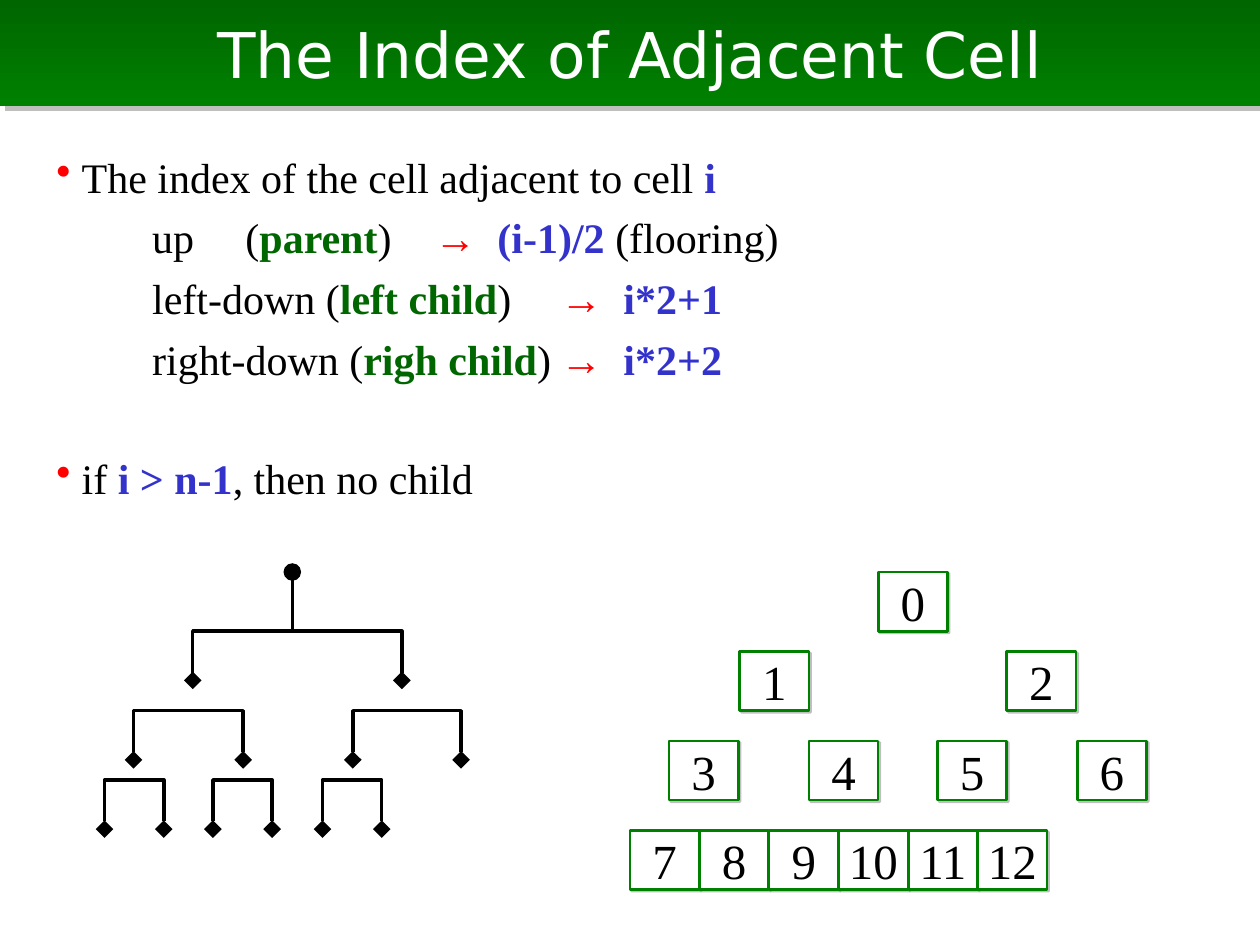
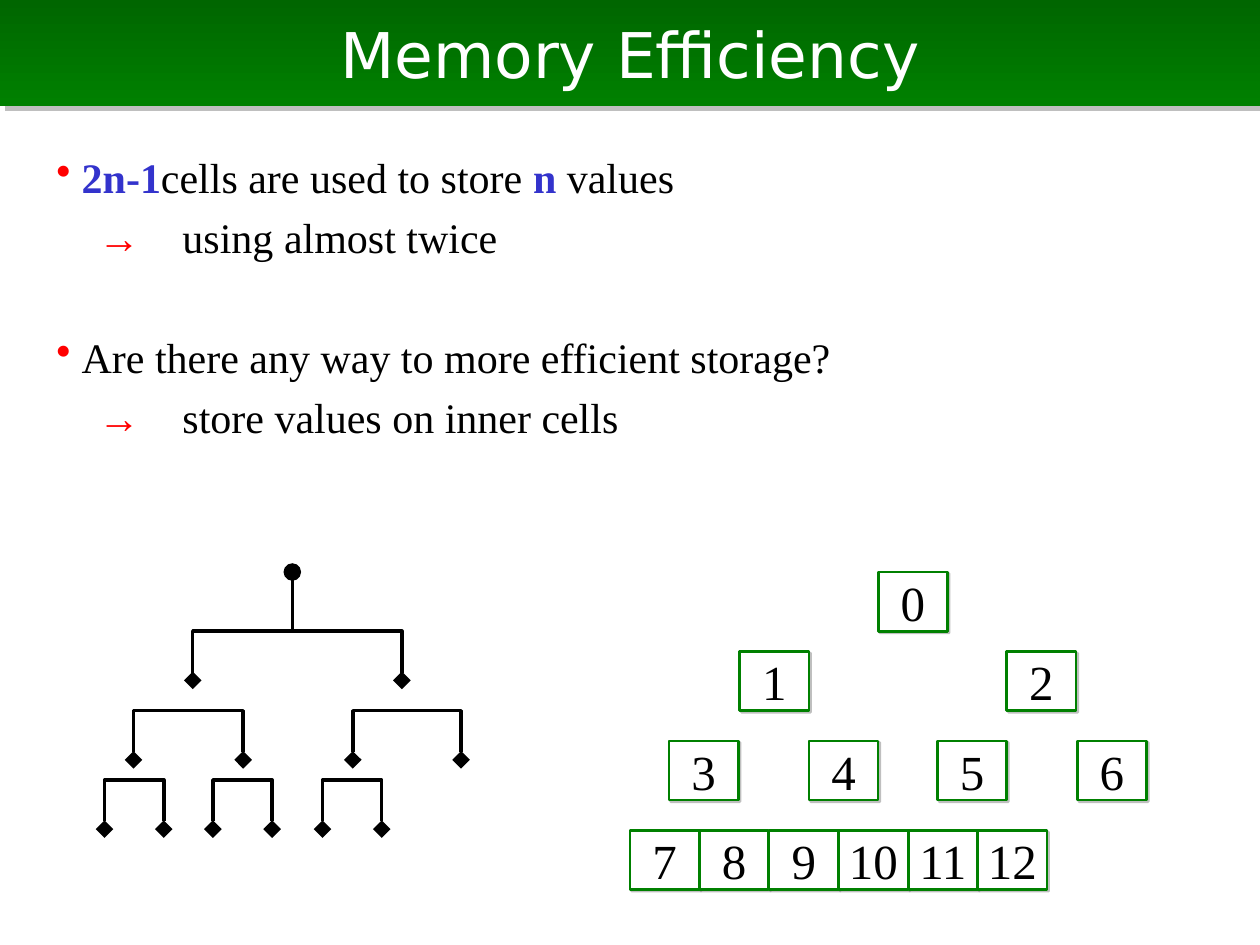
from lxml import etree
from pptx import Presentation
from pptx.dml.color import RGBColor
from pptx.enum.shapes import MSO_CONNECTOR, MSO_SHAPE
from pptx.enum.text import MSO_ANCHOR, PP_ALIGN
from pptx.oxml.ns import qn
from pptx.util import Inches, Pt

RECTANGLE = MSO_SHAPE.RECTANGLE
STRAIGHT = MSO_CONNECTOR.STRAIGHT
MIDDLE = MSO_ANCHOR.MIDDLE
CENTER = PP_ALIGN.CENTER

COLORS = {
    "ink": "000000",
    "paper": "FFFFFF",
    "dark_green": "006600",
    "green": "008000",
    "blue": "3333CC",
    "red": "FF0000",
    "shadow": "808080",
}
TITLE_FONT = "DejaVu Sans"
BODY_FONT = "Times New Roman"
LINE_GAP = 5.9
SECTION_GAP = 39.4

BRACKET_HEIGHT = 0.39
BRACKETS = [
    (5.01, [(1.53, 3.19)]),
    (5.64, [(1.06, 1.93), (2.8, 3.66)]),
    (6.19, [(0.83, 1.3), (1.69, 2.16), (2.56, 3.03)]),
]
ROOT_X, ROOT_TOP, ROOT_BOTTOM = 2.32, 4.54, 5.01

CELL_WIDTH, CELL_HEIGHT = 0.55, 0.47
LEAF_PITCH = 2.76 / 5
CELL_ROWS = [
    (4.54, [6.97]),
    (5.17, [5.87, 7.99]),
    (5.88, [5.31, 6.42, 7.44, 8.55]),
    (6.59, [5 + LEAF_PITCH * leaf for leaf in range(6)]),
]


def rgb(name):
    return RGBColor.from_string(COLORS[name])


def add_run(paragraph, text, size, color="ink", bold=False, font=BODY_FONT):
    run = paragraph.add_run()
    run.text = text
    run.font.name = font
    run.font.size = Pt(size)
    run.font.bold = bold
    run.font.color.rgb = rgb(color)


def add_shadow(shape, distance):
    shape.shadow.inherit = False
    effects = shape._element.spPr.find(qn("a:effectLst"))
    shadow = etree.SubElement(effects, qn("a:outerShdw"), blurRad="0",
                              dist=str(Pt(distance)), dir="2700000",
                              algn="ctr", rotWithShape="0")
    color = etree.SubElement(shadow, qn("a:srgbClr"), val=COLORS["shadow"])
    etree.SubElement(color, qn("a:alpha"), val="50000")


def add_title(slide, text):
    band = slide.shapes.title
    band.left, band.top = Inches(0), Inches(0)
    band.width, band.height = Inches(10), Inches(0.84)
    band.fill.gradient()
    band.fill.gradient_angle = 270
    for stop, name in zip(band.fill.gradient_stops, ("dark_green", "green")):
        stop.color.rgb = rgb(name)
    add_shadow(band, 4.2)
    band.text_frame.vertical_anchor = MIDDLE
    heading = band.text_frame.paragraphs[0]
    heading.alignment = CENTER
    add_run(heading, text, 36, "paper", font=TITLE_FONT)


def set_indent(paragraph, margin, first_line):
    properties = paragraph._p.get_or_add_pPr()
    properties.set("marL", str(Inches(margin)))
    properties.set("indent", str(Inches(first_line)))
    return properties


def format_bullet(paragraph):
    properties = set_indent(paragraph, 0.2, -0.2)
    color = etree.SubElement(properties, qn("a:buClr"))
    etree.SubElement(color, qn("a:srgbClr"), val=COLORS["red"])
    etree.SubElement(properties, qn("a:buChar"), char="•")


def format_detail(paragraph, start, stops):
    properties = set_indent(paragraph, 0, start)
    etree.SubElement(properties, qn("a:buNone"))
    tabs = etree.SubElement(properties, qn("a:tabLst"))
    for stop in stops:
        etree.SubElement(tabs, qn("a:tab"), pos=str(Inches(stop)), algn="l")


def bullet(*runs, gap=LINE_GAP):
    return runs, gap, None


def detail(start, stops, *runs):
    return runs, LINE_GAP, (start, stops)


def plain(text):
    return text, "ink", False


def strong(text, color="blue"):
    return text, color, True


def arrow():
    return strong("→\t", "red")


def child_rule(side, formula, stops):
    return detail(0.76, stops, plain(f"{side[0]} ("),
                  strong(side[1], "dark_green"), plain(")\t"),
                  arrow(), strong(formula))


def answer(text):
    return detail(0.33, [0.83], arrow(), plain(text))


def add_body(slide, lines):
    box = slide.shapes.add_textbox(Inches(0.35), Inches(1.15),
                                   Inches(9.06), Inches(3.23))
    frame = box.text_frame
    frame.word_wrap = True
    for index, (runs, gap, indent) in enumerate(lines):
        paragraph = frame.add_paragraph() if index else frame.paragraphs[0]
        paragraph.space_before = Pt(gap)
        if indent:
            format_detail(paragraph, *indent)
        else:
            format_bullet(paragraph)
        for text, color, bold in runs:
            add_run(paragraph, text, 24, color, bold)


def style_branch(branch, **ends):
    branch.line.color.rgb = rgb("ink")
    branch.line.width = Pt(2)
    outline = branch.line._get_or_add_ln()
    for end, kind in ends.items():
        etree.SubElement(outline, qn(f"a:{end}"), type=kind, w="lg", len="lg")


def add_bracket(slide, left, right, top):
    bottom = top + BRACKET_HEIGHT
    builder = slide.shapes.build_freeform(Inches(left), Inches(bottom))
    corners = [(left, top), (right, top), (right, bottom)]
    builder.add_line_segments([(Inches(x), Inches(y)) for x, y in corners],
                              close=False)
    bracket = builder.convert_to_shape()
    bracket.shadow.inherit = False
    bracket.fill.background()
    style_branch(bracket, headEnd="diamond", tailEnd="diamond")


def add_branch_tree(slide):
    for top, spans in reversed(BRACKETS):
        for left, right in spans:
            add_bracket(slide, left, right, top)
    root = slide.shapes.add_connector(STRAIGHT, Inches(ROOT_X),
                                      Inches(ROOT_BOTTOM), Inches(ROOT_X),
                                      Inches(ROOT_TOP))
    style_branch(root, tailEnd="oval")
    etree.SubElement(root._element.spPr, qn("a:effectLst"))


def add_cell(slide, index, left, top):
    cell = slide.shapes.add_shape(RECTANGLE, Inches(left), Inches(top),
                                  Inches(CELL_WIDTH), Inches(CELL_HEIGHT))
    cell.fill.solid()
    cell.fill.fore_color.rgb = rgb("paper")
    cell.line.color.rgb = rgb("green")
    cell.line.width = Pt(1.5)
    add_shadow(cell, 1.4)
    cell.text_frame.word_wrap = False
    cell.text_frame.vertical_anchor = MIDDLE
    label = cell.text_frame.paragraphs[0]
    label.alignment = CENTER
    add_run(label, str(index), 28)


def add_cell_tree(slide):
    places = [(left, top) for top, lefts in CELL_ROWS for left in lefts]
    for index, (left, top) in enumerate(places):
        add_cell(slide, index, left, top)


def add_heap_slide(deck, title, lines):
    slide = deck.slides.add_slide(deck.slide_layouts[5])
    add_title(slide, title)
    add_body(slide, lines)
    add_branch_tree(slide)
    add_cell_tree(slide)


def main():
    deck = Presentation()
    deck.slide_width, deck.slide_height = Inches(10), Inches(7.5)

    add_heap_slide(deck, "The Index of Adjacent Cell", [
        bullet(plain("The index of the cell adjacent to cell "), strong("i")),
        detail(0.76, [1.42, 4.7, 5.94], plain("up\t("),
               strong("parent", "dark_green"), plain(")\t"), arrow(),
               strong("(i-1)/2 "), plain("(flooring)")),
        child_rule(("left-down", "left child"), "i*2+1", [4.3, 5.55]),
        child_rule(("right-down", "righ child"), "i*2+2", [4.2, 5.49]),
        bullet(plain("if "), strong("i > n-1"), plain(", then no child"),
               gap=SECTION_GAP),
    ])
    add_heap_slide(deck, "Memory Efficiency", [
        bullet(strong("2n-1"), plain("cells are used to store "), strong("n"),
               plain(" values")),
        answer("using almost twice"),
        bullet(plain("Are there any way to more efficient storage?"),
               gap=SECTION_GAP),
        answer("store values on inner cells"),
    ])
    deck.save("out.pptx")


if __name__ == "__main__":
    main()
